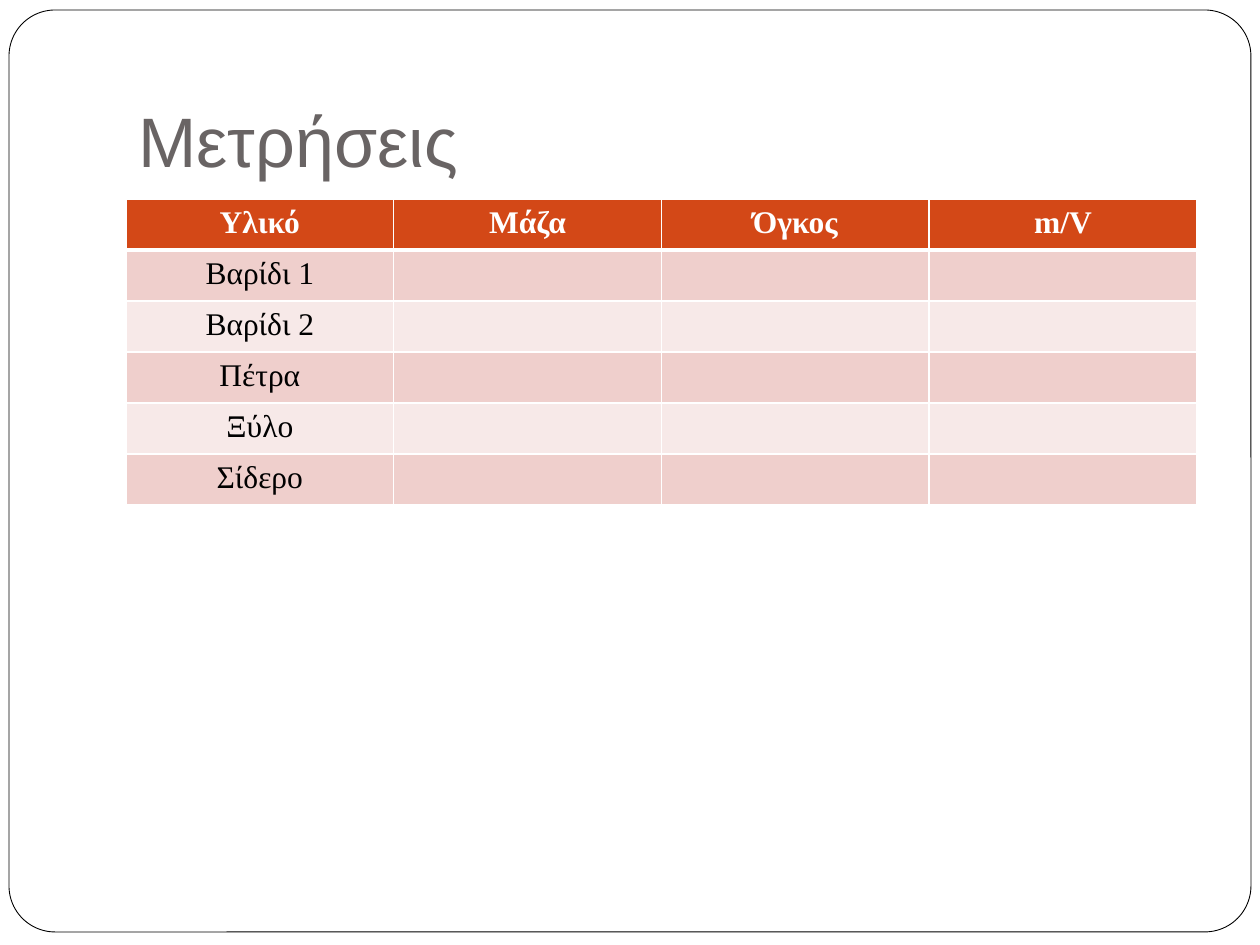
from dataclasses import dataclass

from lxml.etree import SubElement
from pptx import Presentation
from pptx.dml.color import RGBColor
from pptx.enum.shapes import MSO_SHAPE
from pptx.enum.text import MSO_ANCHOR, MSO_AUTO_SIZE, PP_ALIGN
from pptx.oxml.ns import qn
from pptx.util import Pt

SCALE = 914400 / 126


@dataclass(frozen=True)
class Theme:
    paper: str = "FFFFFF"
    ink: str = "000000"
    title: str = "696464"
    head: str = "D34817"
    bands: tuple = ("EFCFCC", "F7E9E8")
    sans: str = "Arial"
    serif: str = "Times New Roman"
    title_size: int = 40
    cell_size: int = 18
    frame_line: float = 0.5
    rule: int = 1
    head_rule: int = 3


THEME = Theme()
HEADS = ["Υλικό", "Μάζα", "Όγκος", "m/V"]
ITEMS = ["Βαρίδι 1", "Βαρίδι 2", "Πέτρα", "Ξύλο", "Σίδερο"]


def px(count):
    return round(count * SCALE)


def box(*sides):
    return [px(side) for side in sides]


def paint(fill, color):
    fill.solid()
    fill.fore_color.rgb = RGBColor.from_string(color)


def style(font, name, size, color, bold=False):
    font.name = name
    font.size = Pt(size)
    font.bold = bold
    font.color.rgb = RGBColor.from_string(color)


def add_frame(slide):
    frame = slide.shapes.add_shape(MSO_SHAPE.ROUNDED_RECTANGLE, *box(9, 10, 1242, 922))
    frame.adjustments[0] = 0.05
    frame.shadow.inherit = False
    paint(frame.fill, THEME.paper)
    paint(frame.line.fill, THEME.ink)
    frame.line.width = Pt(THEME.frame_line)
    slide.shapes.title._element.addprevious(frame._element)


def set_title(slide, text):
    title = slide.shapes.title
    title.left, title.top, title.width, title.height = box(126, 38, 1071, 157)
    frame = title.text_frame
    frame.text = text
    frame.word_wrap = True
    frame.auto_size = MSO_AUTO_SIZE.NONE
    frame.vertical_anchor = MSO_ANCHOR.BOTTOM
    frame.margin_bottom = px(13)
    para = frame.paragraphs[0]
    para.alignment = PP_ALIGN.LEFT
    style(para.runs[0].font, THEME.sans, THEME.title_size, THEME.title)


def add_rules(cell, top, bottom):
    props = cell._tc.get_or_add_tcPr()
    widths = {"L": THEME.rule, "R": THEME.rule, "T": top, "B": bottom}
    for side, width in widths.items():
        line = SubElement(props, qn(f"a:ln{side}"), w=str(Pt(width)))
        fill = SubElement(line, qn("a:solidFill"))
        SubElement(fill, qn("a:srgbClr"), val=THEME.paper)


def set_cell(cell, text, row):
    head = row == 0
    top = THEME.head_rule if row == 1 else THEME.rule
    add_rules(cell, top, THEME.head_rule if head else THEME.rule)
    paint(cell.fill, THEME.head if head else THEME.bands[(row - 1) % 2])
    cell.text_frame.text = text
    para = cell.text_frame.paragraphs[0]
    para.alignment = PP_ALIGN.CENTER
    color = THEME.paper if head else THEME.ink
    for part in [para, *para.runs]:
        style(part.font, THEME.serif, THEME.cell_size, color, head)


def add_grid(slide, heads, items):
    rows = [heads] + [[item] + [""] * (len(heads) - 1) for item in items]
    place = box(126, 199, 1071, 51 * len(rows))
    table = slide.shapes.add_table(len(rows), len(heads), *place).table
    for r, row in enumerate(rows):
        for c, text in enumerate(row):
            set_cell(table.cell(r, c), text, r)


def main():
    deck = Presentation()
    deck.slide_width, deck.slide_height = box(1260, 945)
    slide = deck.slides.add_slide(deck.slide_layouts[5])
    paint(slide.background.fill, THEME.paper)
    add_frame(slide)
    set_title(slide, "Μετρήσεις")
    add_grid(slide, HEADS, ITEMS)
    deck.save("out.pptx")


if __name__ == "__main__":
    main()
